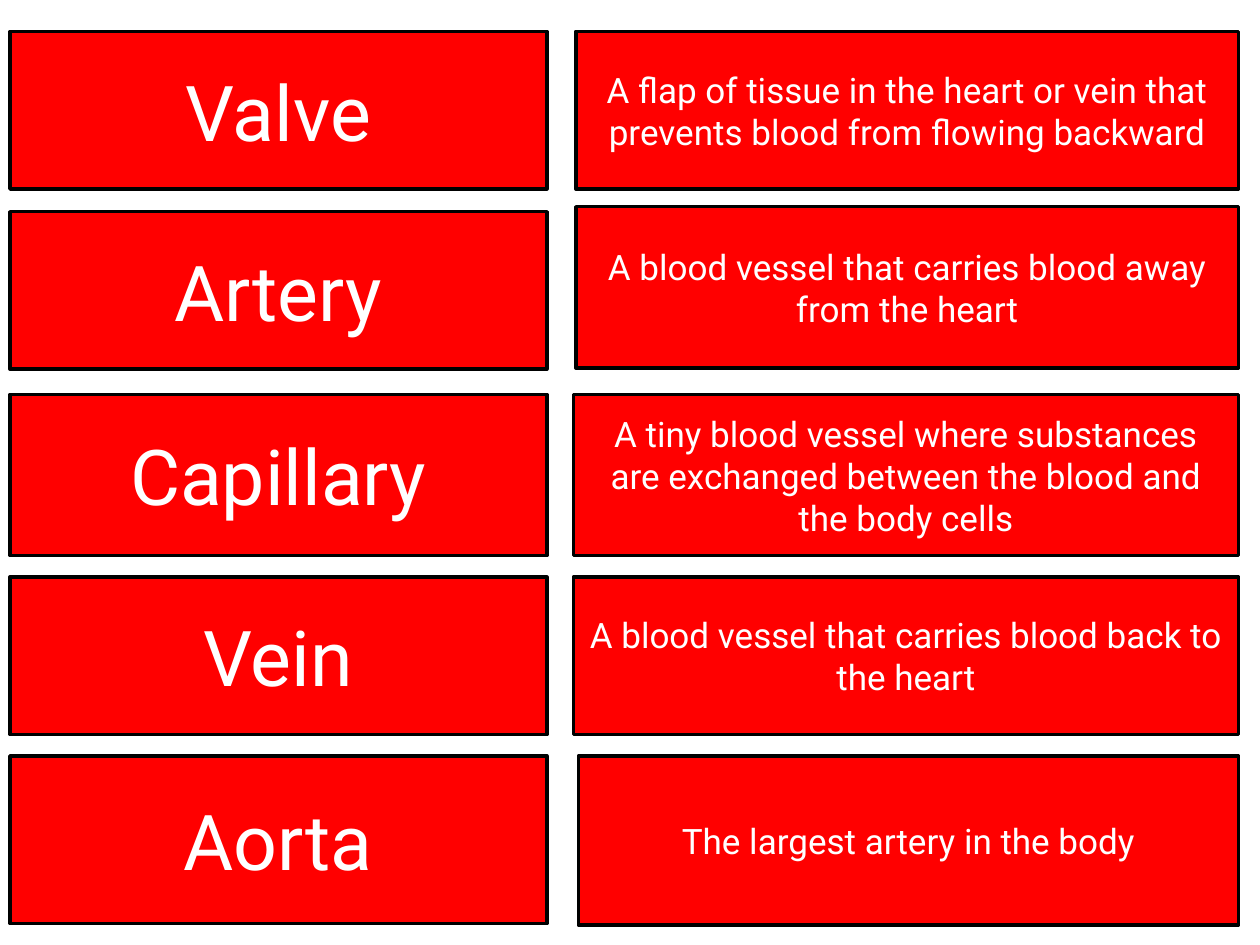
"""Build a slide of blood vessel terms and their definitions."""
from typing import NamedTuple

from lxml import etree
from pptx import Presentation
from pptx import util as u
from pptx.dml.color import RGBColor
from pptx.enum import shapes, text
from pptx.oxml import ns

RED = RGBColor(0xFF, 0x00, 0x00)
BLACK = RGBColor(0x00, 0x00, 0x00)
WHITE = RGBColor(0xFF, 0xFF, 0xFF)
FONT = "Roboto"
TERM_SIZE = 44
DEFINITION_SIZE = 20
TERM_LEFT = 0.08
TERM_WIDTH = 4.26
DEFINITION_RIGHT = 9.83


class Entry(NamedTuple):
    term: str
    definition: str
    top: float
    height: float
    definition_left: float
    definition_top: float
    definition_height: float


ENTRIES = [
    Entry("Valve",
          "A flap of tissue in the heart or vein that prevents blood from flowing backward",
          0.25, 1.25, 4.57, 0.25, 1.25),
    Entry("Artery", "A blood vessel that carries blood away from the heart",
          1.68, 1.25, 4.57, 1.64, 1.28),
    Entry("Capillary",
          "A tiny blood vessel where substances are exchanged between the blood and the body cells",
          3.13, 1.28, 4.55, 3.13, 1.28),
    Entry("Vein", "A blood vessel that carries blood back to the heart",
          4.58, 1.25, 4.55, 4.58, 1.25),
    Entry("Aorta", "The largest artery in the body",
          6, 1.33, 4.59, 6, 1.34),
]


def add_card(slide, words: str, size: int, left: float, top: float,
             width: float, height: float) -> None:
    box = slide.shapes.add_shape(
        shapes.MSO_SHAPE.FLOWCHART_PROCESS,
        u.Inches(left), u.Inches(top), u.Inches(width), u.Inches(height))
    box.shadow.inherit = False
    box.fill.solid()
    box.fill.fore_color.rgb = RED
    box.line.color.rgb = BLACK
    box.line.width = u.Pt(2)
    etree.SubElement(box.element.spPr.find(ns.qn("a:ln")), ns.qn("a:round"))
    frame = box.text_frame
    frame.text = words
    frame.word_wrap = True
    frame.vertical_anchor = text.MSO_ANCHOR.MIDDLE
    frame.margin_top = frame.margin_bottom = u.Inches(0.1)
    para = frame.paragraphs[0]
    para.alignment = text.PP_ALIGN.CENTER
    span = para.runs[0]
    span.font.name = FONT
    span.font.size = u.Pt(size)
    span.font.color.rgb = WHITE


def add_entry(slide, entry: Entry) -> None:
    add_card(slide, entry.term, TERM_SIZE,
             TERM_LEFT, entry.top, TERM_WIDTH, entry.height)
    add_card(slide, entry.definition, DEFINITION_SIZE,
             entry.definition_left, entry.definition_top,
             DEFINITION_RIGHT - entry.definition_left, entry.definition_height)


def main() -> None:
    deck = Presentation()
    deck.slide_width = u.Inches(10)
    deck.slide_height = u.Inches(7.5)
    slide = deck.slides.add_slide(deck.slide_layouts[6])
    for entry in ENTRIES:
        add_entry(slide, entry)
    deck.save("out.pptx")


if __name__ == "__main__":
    main()
